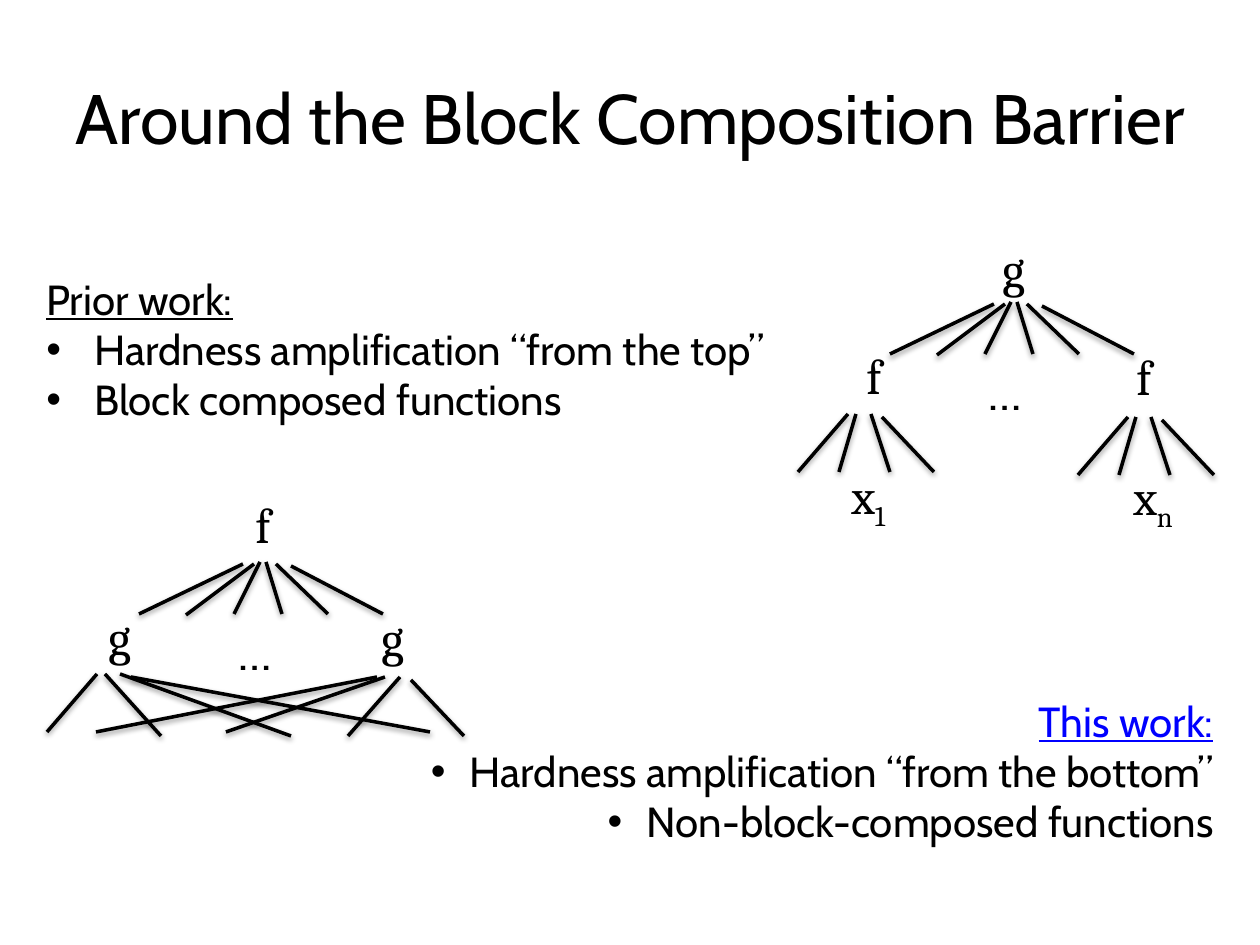
"""Builds a slide contrasting two ways of composing functions f and g."""
from lxml.etree import SubElement
from pptx import Presentation
from pptx.dml.color import RGBColor
from pptx.enum.shapes import MSO_CONNECTOR as Connector
from pptx.enum.text import MSO_ANCHOR as Anchor, PP_ALIGN as Align
from pptx.oxml.ns import qn
from pptx.util import Pt

PX = 914400 // 126
BLACK, BLUE = RGBColor(0, 0, 0), RGBColor(0, 0, 255)
THEME = {
    "title": {"name": "Cabin", "size": Pt(40)},
    "body": {"name": "Cabin", "size": Pt(24)},
    "node": {"name": "Cambria", "size": Pt(28)},
    "dots": {"name": "Cabin", "size": Pt(28)},
    "line": Pt(2),
    "shadow": {"blurRad": 40000, "dist": 20000, "dir": 5400000, "rotWithShape": 0},
    "shadow_alpha": 38000,
}

TITLE = ("Around the Block Composition Barrier", (35, 38, 1190, 157))
NOTES = [
    {"box": (34, 267, 822, 165), "align": Align.LEFT, "indent": 48,
     "heading": "Prior work:", "color": BLACK,
     "points": ["Hardness amplification “from the top”", "Block composed functions"]},
    {"box": (369, 689, 857, 165), "align": Align.RIGHT, "indent": 39,
     "heading": "This work:", "color": BLUE,
     "points": ["Hardness amplification “from the bottom”", "Non-block-composed functions"]},
]

ROOT_FAN = [(-20, 2, -124, 52), (-9, 2, -77, 53), (-3, 0, -29, 52),
            (3, 0, 19, 52), (13, 2, 65, 52), (28, 4, 120, 52)]
BRANCH_STARTS = [(-16, 0), (-8, 0), (7, 0), (18, 3)]
SEPARATE_ENDS = [(-66, 58), (-25, 58), (26, 58), (70, 58)]
TREES = [
    {"root": (1014, 302),
     "branches": [((864, 414), SEPARATE_ENDS), ((1144, 417), SEPARATE_ENDS)],
     "labels": [("g", "", "node", (990, 232, 42)), ("f", "", "node", (854, 339, 42)),
                ("f", "", "node", (1124, 340, 42)), ("x", "1", "node", (839, 459, 103)),
                ("x", "n", "node", (1121, 460, 103)), ("…", "", "dots", (976, 355, 86))]},
    {"root": (263, 562),
     "branches": [((113, 674), [(-66, 58), (48, 62), (178, 62), (317, 58)]),
                  ((393, 677), [(-297, 55), (-167, 55), (-45, 59), (71, 59)])],
     "labels": [("f", "", "node", (243, 488, 42)), ("g", "", "node", (96, 600, 42)),
                ("g", "", "node", (369, 601, 42)), ("…", "", "dots", (226, 615, 86))]},
]
LABEL_HEIGHT = 72


def add_box(shapes, box):
    frame = shapes.add_textbox(*(value * PX for value in box)).text_frame
    frame.word_wrap = True
    return frame


def add_run(paragraph, text, style, color=BLACK, **extra):
    run = paragraph.add_run()
    run.text = text
    for name, value in {**THEME[style], **extra}.items():
        setattr(run.font, name, value)
    run.font.color.rgb = color
    return run


def add_bullet(paragraph, indent):
    properties = paragraph._p.get_or_add_pPr()
    properties.set("marL", str(indent * PX))
    properties.set("indent", str(-indent * PX))
    SubElement(properties, qn("a:buFont"), typeface="Arial")
    SubElement(properties, qn("a:buChar"), char="•")


def add_note(slide, note):
    frame = add_box(slide.shapes, note["box"])
    heading = frame.paragraphs[0]
    heading.alignment = note["align"]
    add_run(heading, note["heading"], "body", note["color"], underline=True)
    for point in note["points"]:
        paragraph = frame.add_paragraph()
        paragraph.alignment = note["align"]
        add_bullet(paragraph, note["indent"])
        add_run(paragraph, point, "body")


def add_edge(shapes, origin, start, end):
    points = [(origin[axis] + point[axis]) * PX for point in (start, end) for axis in (0, 1)]
    edge = shapes.add_connector(Connector.STRAIGHT, *points)
    edge.line.color.rgb = BLACK
    edge.line.width = THEME["line"]
    effects = SubElement(edge._element.spPr, qn("a:effectLst"))
    shadow = SubElement(effects, qn("a:outerShdw"),
                        {name: str(value) for name, value in THEME["shadow"].items()})
    color = SubElement(shadow, qn("a:srgbClr"), val=str(BLACK))
    SubElement(color, qn("a:alpha"), val=str(THEME["shadow_alpha"]))


def add_tree(slide, tree):
    shapes = slide.shapes.add_group_shape().shapes
    for edge in ROOT_FAN:
        add_edge(shapes, tree["root"], edge[:2], edge[2:])
    for origin, ends in tree["branches"]:
        for start, end in zip(BRANCH_STARTS, ends):
            add_edge(shapes, origin, start, end)
    for text, subscript, style, place in tree["labels"]:
        paragraph = add_box(shapes, (*place, LABEL_HEIGHT)).paragraphs[0]
        add_run(paragraph, text, style)
        if subscript:
            run = add_run(paragraph, subscript, style)
            run._r.get_or_add_rPr().set("baseline", "-25000")


def main():
    presentation = Presentation()
    presentation.slide_width, presentation.slide_height = 1260 * PX, 945 * PX
    slide = presentation.slides.add_slide(presentation.slide_layouts[6])
    text, box = TITLE
    frame = add_box(slide.shapes, box)
    frame.vertical_anchor = Anchor.MIDDLE
    frame.paragraphs[0].alignment = Align.CENTER
    add_run(frame.paragraphs[0], text, "title")
    for note in NOTES:
        add_note(slide, note)
    for tree in TREES:
        add_tree(slide, tree)
    presentation.save("out.pptx")


if __name__ == "__main__":
    main()
